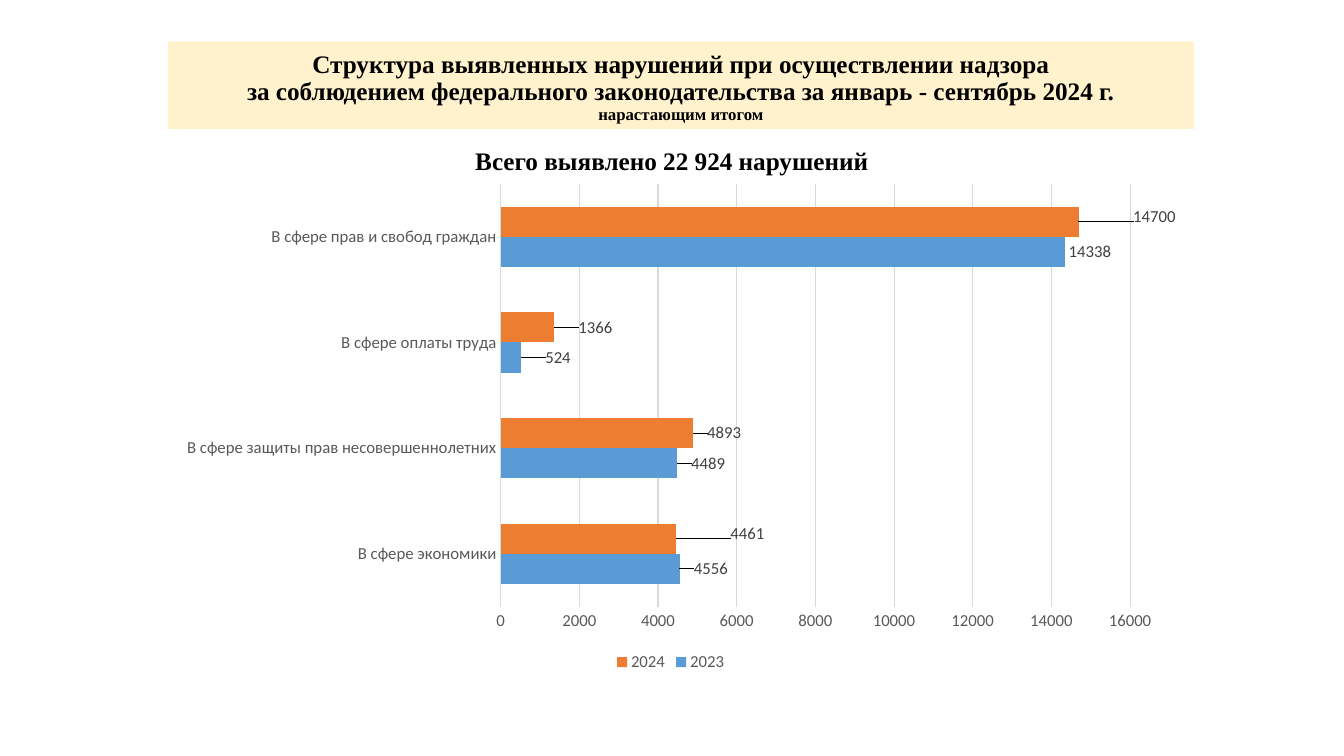
from dataclasses import dataclass
from lxml import etree
from pptx import Presentation
from pptx.chart.data import CategoryChartData
from pptx.dml.color import RGBColor
from pptx.enum.chart import XL_CHART_TYPE, XL_LABEL_POSITION, XL_LEGEND_POSITION, XL_TICK_MARK
from pptx.enum.text import MSO_ANCHOR, MSO_AUTO_SIZE, PP_ALIGN
from pptx.oxml.ns import qn
from pptx.util import Cm, Pt

BARS = XL_CHART_TYPE.BAR_CLUSTERED
OUTER = XL_LABEL_POSITION.OUTSIDE_END
BOTTOM = XL_LEGEND_POSITION.BOTTOM
NO_TICK = XL_TICK_MARK.NONE
CENTER = PP_ALIGN.CENTER
LOW, HIGH = MSO_ANCHOR.BOTTOM, MSO_ANCHOR.TOP
NO_FIT = MSO_AUTO_SIZE.NONE

TITLE = [
    ("Структура выявленных нарушений при осуществлении надзора", 18),
    ("за соблюдением федерального законодательства за январь - сентябрь 2024 г.", 18),
    ("нарастающим итогом", 12),
]
TOTAL = [("Всего выявлено 22 924 нарушений", 18)]
SPHERES = ["В сфере экономики", "В сфере защиты прав несовершеннолетних",
           "В сфере оплаты труда", "В сфере прав и свобод граждан"]
YEARS = {
    "2023": ((4556, 4489, 524, 14338), "5B9BD5"),
    "2024": ((4461, 4893, 1366, 14700), "ED7D31"),
}
SHIFTS = {
    "2023": ((0.01, 0), (0.01, 0), (0.02, 0), (0, 0)),
    "2024": ((0.05, -0.01), (0.01, 0), (0.02, 0), (0.05, -0.01)),
}
PLOT = {"layoutTarget": "inner", "xMode": "edge", "yMode": "edge",
        "x": 0.331, "y": 0.021, "w": 0.626, "h": 0.841}
LEFT, WIDE = 4.23, 25.4
BOXES = {"title": (LEFT, 1.04, 25.86, 2.21), "total": (LEFT, 3.68, WIDE, 0.91),
         "chart": (LEFT, 4.37, WIDE, 12.67)}


@dataclass(frozen=True)
class Theme:
    serif: str = "Times New Roman"
    sans: str = "Calibri"
    ink: str = "000000"
    gray: str = "595959"
    label: str = "404040"
    grid: str = "D9D9D9"
    cream: str = "FFF2CC"
    small: int = 12


THEME = Theme()


def format(item, values):
    for name, value in values.items():
        setattr(item, name, value)


def style(font, name, size, color, bold=False):
    format(font, {"name": name, "size": Pt(size), "bold": bold})
    font.color.rgb = RGBColor.from_string(color)


def place(key):
    return [Cm(side) for side in BOXES[key]]


def write(shape, key, lines, anchor, pitch):
    format(shape, dict(zip(("left", "top", "width", "height"), place(key))))
    frame = shape.text_frame
    format(frame, {"word_wrap": True, "auto_size": NO_FIT, "vertical_anchor": anchor})
    for row, (text, size) in enumerate(lines):
        para = frame.add_paragraph() if row else frame.paragraphs[0]
        format(para, {"alignment": CENTER, "line_spacing": pitch, "space_before": Pt(0)})
        run = para.add_run()
        run.text = text
        style(run.font, THEME.serif, size, THEME.ink, True)


def arrange(parent, index, values):
    for old in parent.findall(qn("c:layout")):
        parent.remove(old)
    layout = etree.Element(qn("c:layout"))
    manual = etree.SubElement(layout, qn("c:manualLayout"))
    for name, value in values.items():
        etree.SubElement(manual, qn(f"c:{name}")).set("val", str(value))
    parent.insert(index, layout)


def draw(slide):
    data = CategoryChartData()
    data.categories = SPHERES
    for year, (counts, _) in YEARS.items():
        data.add_series(year, counts)
    chart = slide.shapes.add_chart(BARS, *place("chart"), data).chart
    format(chart, {"has_title": False, "has_legend": True})
    format(chart.legend, {"position": BOTTOM, "include_in_layout": False})
    style(chart.font, THEME.sans, THEME.small, THEME.gray)
    style(chart.legend.font, THEME.sans, THEME.small, THEME.gray)

    for axis in (chart.category_axis, chart.value_axis):
        format(axis, {"major_tick_mark": NO_TICK, "minor_tick_mark": NO_TICK})
        axis.format.line.fill.background()
        style(axis.tick_labels.font, THEME.sans, THEME.small, THEME.gray)
    format(chart.value_axis, {"minimum_scale": 0, "maximum_scale": 16000,
                              "major_unit": 2000, "has_major_gridlines": True})
    grid = chart.value_axis.major_gridlines.format.line
    grid.color.rgb = RGBColor.from_string(THEME.grid)
    grid.width = Pt(0.75)

    plot = chart.plots[0]
    format(plot, {"gap_width": 150, "overlap": 0, "vary_by_categories": False})
    for series in plot.series:
        series.format.fill.solid()
        series.format.fill.fore_color.rgb = RGBColor.from_string(YEARS[series.name][1])
        labels = series.data_labels
        format(labels, {"show_value": True, "position": OUTER})
        style(labels.font, THEME.sans, THEME.small, THEME.label)
        for index in range(len(SPHERES)):
            label = series.points[index].data_label
            style(label.font, THEME.sans, THEME.small, THEME.label)
            label.position = OUTER
        tags = series._element.iter(qn("c:dLbl"))
        for tag, (right, down) in zip(tags, SHIFTS[series.name]):
            arrange(tag, 1, {"x": right, "y": down})
    arrange(chart._chartSpace.find(".//" + qn("c:plotArea")), 0, PLOT)


def main():
    """Build the slide on supervision results."""
    deck = Presentation()
    format(deck, {"slide_width": Cm(33.87), "slide_height": Cm(19.05)})
    slide = deck.slides.add_slide(deck.slide_layouts[0])
    title, total = slide.placeholders
    title.fill.solid()
    title.fill.fore_color.rgb = RGBColor.from_string(THEME.cream)
    write(title, "title", TITLE, LOW, 0.9)
    write(total, "total", TOTAL, HIGH, 0.8)
    draw(slide)
    deck.save("out.pptx")


if __name__ == "__main__":
    main()
